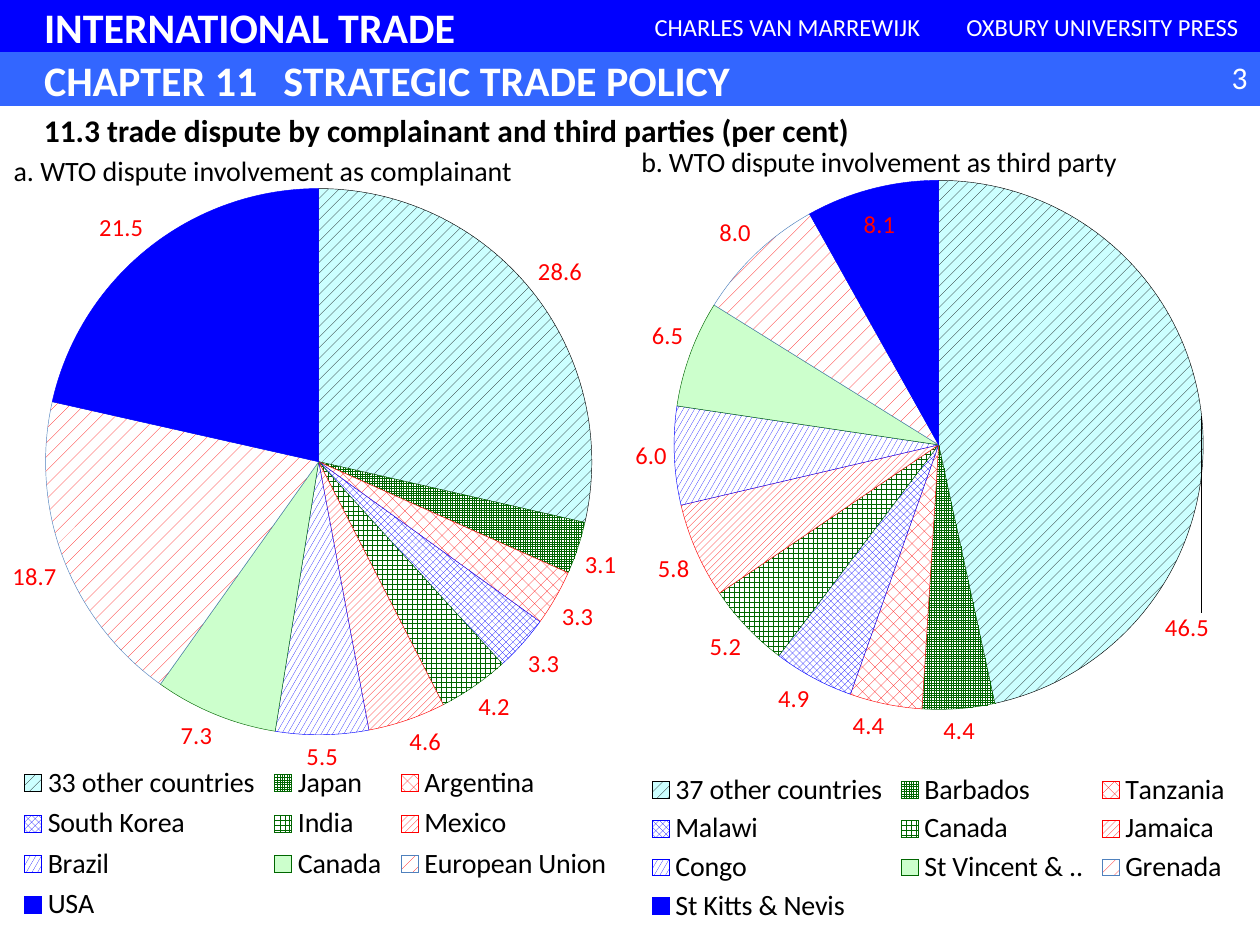
import pptx
import pptx.chart.data
import pptx.dml.color
import pptx.enum.chart
import pptx.enum.dml
import pptx.enum.shapes
import pptx.enum.text
import pptx.oxml
import pptx.oxml.ns
import pptx.util
from pptx.util import Inches

FONT = "Calibri"
ALIGN = pptx.enum.text.PP_ALIGN
PATTERN = pptx.enum.dml.MSO_PATTERN
LABEL_POSITION = pptx.enum.chart.XL_LABEL_POSITION

SLICE_STYLES = [
    (PATTERN.DASHED_UPWARD_DIAGONAL, "000000", "CCFFFF", "000000"),
    (PATTERN.SMALL_GRID, "006600", "FFFFFF", "006600"),
    (PATTERN.PERCENT_30, "FF0000", "FFFFFF", "FF0000"),
    (PATTERN.LARGE_CHECKER_BOARD, "0000FF", "FFFFFF", "0000FF"),
    (PATTERN.LARGE_GRID, "006600", "FFFFFF", "006600"),
    (PATTERN.WIDE_UPWARD_DIAGONAL, "FF0000", "FFFFFF", "FF0000"),
    (PATTERN.LARGE_CONFETTI, "0000FF", "FFFFFF", "0000FF"),
    (None, "CCFFCC", None, "006600"),
    (PATTERN.PERCENT_10, "FF0000", "FFFFFF", "4F81BD"),
    (None, "0000FF", None, "0000FF"),
]

COMPLAINANTS = {
    "33 other countries": 28.6, "Japan": 3.1, "Argentina": 3.3,
    "South Korea": 3.3, "India": 4.2, "Mexico": 4.6, "Brazil": 5.5,
    "Canada": 7.3, "European Union": 18.7, "USA": 21.5,
}
THIRD_PARTIES = {
    "37 other countries": 46.5, "Barbados": 4.4, "Tanzania": 4.4,
    "Malawi": 4.9, "Canada": 5.2, "Jamaica": 5.8, "Congo": 6.0,
    "St Vincent & ..": 6.5, "Grenada": 8.0, "St Kitts & Nevis": 8.1,
}


def colour(value):
    return pptx.dml.color.RGBColor.from_string(value)


def style_font(font, size, value, bold=False):
    font.name = FONT
    font.size = pptx.util.Pt(size)
    font.bold = bold
    font.color.rgb = colour(value)


def add_run(para, text, size, value, bold=False):
    span = para.add_run()
    span.text = text
    style_font(span.font, size, value, bold)


def add_band(page, area, fill, text, size, bold=False, align=ALIGN.LEFT, indent=0.1):
    band = page.shapes.add_shape(
        pptx.enum.shapes.MSO_SHAPE.RECTANGLE, *map(Inches, area))
    band.shadow.inherit = False
    band.fill.solid()
    band.fill.fore_color.rgb = colour(fill)
    band.line.color.rgb = colour(fill)
    band.line.width = pptx.util.Pt(0.75)
    frame = band.text_frame
    frame.margin_left = Inches(indent)
    frame.vertical_anchor = pptx.enum.text.MSO_ANCHOR.MIDDLE
    para = frame.paragraphs[0]
    para.alignment = align
    add_run(para, text, size, "FFFFFF", bold)
    return para


def add_tab_stop(para, position):
    properties = para._p.get_or_add_pPr()
    properties.append(pptx.oxml.parse_xml(
        f'<a:tabLst {pptx.oxml.ns.nsdecls("a")}>'
        f'<a:tab pos="{Inches(position)}" algn="l"/></a:tabLst>'))


def add_text(page, area, text, size, value="000000", bold=False,
             align=ALIGN.LEFT, wrap=True):
    box = page.shapes.add_textbox(*map(Inches, area))
    box.text_frame.word_wrap = wrap
    para = box.text_frame.paragraphs[0]
    para.alignment = align
    add_run(para, text, size, value, bold)


def set_layout(parent, left, top, size=None, inner=False, offset=False):
    for old in parent.findall(pptx.oxml.ns.qn("c:layout")):
        parent.remove(old)
    parts = [("layoutTarget", "inner")] if inner else []
    if not offset:
        parts += [("xMode", "edge"), ("yMode", "edge")]
    parts += [("x", left), ("y", top)]
    if size:
        parts += zip("wh", size)
    content = "".join(f'<c:{name} val="{value}"/>' for name, value in parts)
    layout = pptx.oxml.parse_xml(
        f'<c:layout {pptx.oxml.ns.nsdecls("c")}><c:manualLayout>'
        f'{content}</c:manualLayout></c:layout>')
    leaders = {pptx.oxml.ns.qn(tag) for tag in ("c:idx", "c:tx", "c:legendPos")}
    index = sum(child.tag in leaders for child in parent)
    parent.insert(index, layout)


def style_slice(point, pattern, front, back, border):
    fill = point.format.fill
    if pattern is None:
        fill.solid()
    else:
        fill.patterned()
        fill.pattern = pattern
        fill.back_color.rgb = colour(back)
    fill.fore_color.rgb = colour(front)
    point.format.line.color.rgb = colour(border)
    point.format.line.width = pptx.util.Pt(0.25)


def add_pie(page, area, shares, plot_corner, plot_size, legend_corner, legend_size):
    data = pptx.chart.data.CategoryChartData(number_format="0.0")
    data.categories = list(shares)
    data.add_series("Series 1", list(shares.values()))
    chart = page.shapes.add_chart(
        pptx.enum.chart.XL_CHART_TYPE.PIE, *map(Inches, area), data).chart
    style_font(chart.font, 10, "000000")
    chart.has_title = False
    chart.has_legend = True
    chart.legend.position = pptx.enum.chart.XL_LEGEND_POSITION.BOTTOM
    chart.legend.include_in_layout = False
    style_font(chart.legend.font, 16, "000000")
    set_layout(chart.legend._element, *legend_corner, legend_size)
    set_layout(chart._chartSpace.chart.plotArea, *plot_corner, plot_size, inner=True)
    plot = chart.plots[0]
    plot.vary_by_categories = True
    series = plot.series[0]
    for index, style in enumerate(SLICE_STYLES):
        style_slice(series.points[index], *style)
    labels = series.data_labels
    labels.show_value = True
    labels.number_format = "0.0"
    labels.number_format_is_linked = False
    labels.position = LABEL_POSITION.OUTSIDE_END
    style_font(labels.font, 14, "FF0000")
    return chart


def move_label(chart, index, across, down):
    label = chart.plots[0].series[0].points[index].data_label
    style_font(label.font, 14, "FF0000")
    label.position = LABEL_POSITION.OUTSIDE_END
    element = label._get_or_add_dLbl()
    element.get_or_add_txPr().find(pptx.oxml.ns.qn("a:bodyPr")).set("wrap", "none")
    set_layout(element, across, down, offset=True)


def add_chart_title(chart, text, left, top):
    title = chart.chart_title
    add_run(title.text_frame.paragraphs[0], text, 16, "000000")
    set_layout(title._element, left, top)


def add_header(page):
    add_band(page, (0, 0, 10, 0.42), "0000FF", "INTERNATIONAL TRADE", 24, True, indent=0.35)
    for left, text in ((5, "CHARLES VAN MARREWIJK"), (7.5, "OXBURY UNIVERSITY PRESS")):
        add_band(page, (left, 0, 2.5, 0.42), "0000FF", text, 14, align=ALIGN.CENTER)
    chapter = add_band(page, (0, 0.42, 10, 0.42), "3366FF",
                       "CHAPTER 11\tSTRATEGIC TRADE POLICY", 24, True, indent=0.35)
    add_tab_stop(chapter, 1.9)
    add_text(page, (9.33, 0.41, 0.67, 0.4), "3", 18, "FFFFFF", align=ALIGN.RIGHT)


def main():
    deck = pptx.Presentation()
    deck.slide_width, deck.slide_height = Inches(10), Inches(7.5)
    page = deck.slides.add_slide(deck.slide_layouts[6])
    add_header(page)
    add_pie(page, (0.01, 0.83, 4.99, 6.67), COMPLAINANTS,
            (0.06, 0.1), (0.89, 0.65), (0.02, 0.78), (0.96, 0.2))
    add_text(page, (0.25, 0.83, 7.17, 0.4),
             "11.3 trade dispute by complainant and third parties (per cent)", 18, bold=True)
    add_text(page, (0.01, 1.17, 4.2, 0.37),
             "a. WTO dispute involvement as complainant", 16, wrap=False)
    third = add_pie(page, (5, 0.83, 5, 6.67), THIRD_PARTIES,
                    (0.07, 0.09), (0.84, 0.63), (0.02, 0.79), (0.94, 0.19))
    add_chart_title(third, "b. WTO dispute involvement as third party", 0.01, 0.04)
    move_label(third, 0, -0.07, 0.27)
    move_label(third, 9, 0.04, 0.07)
    deck.save("out.pptx")


if __name__ == "__main__":
    main()
